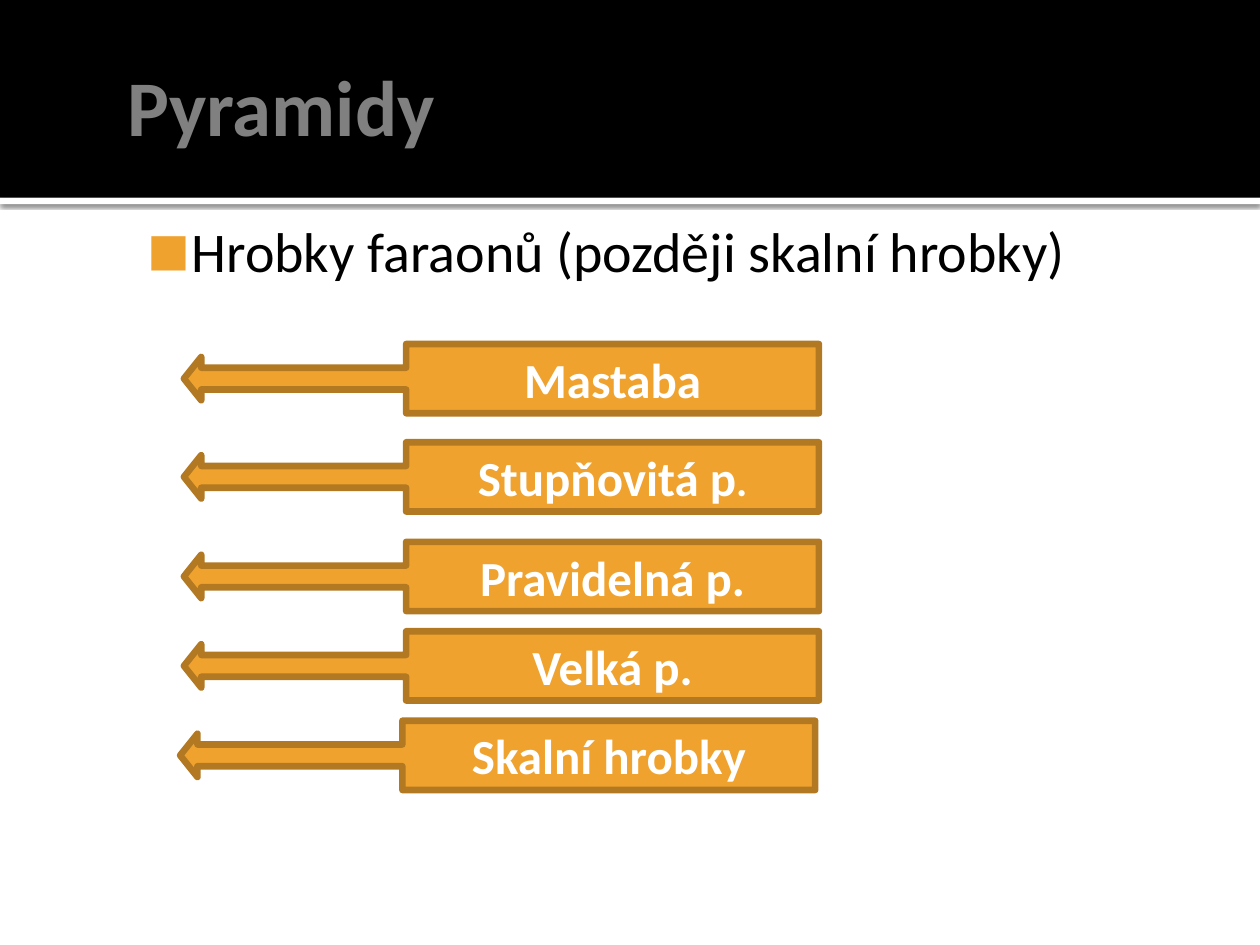
from dataclasses import dataclass

from lxml import etree
from pptx import Presentation
from pptx.dml.color import RGBColor
from pptx.enum import shapes, text
from pptx.oxml import ns
from pptx.util import Inches, Pt

BLACK = RGBColor(0x00, 0x00, 0x00)
WHITE = RGBColor(0xFF, 0xFF, 0xFF)
GRAY = RGBColor(0x80, 0x80, 0x80)
ORANGE = RGBColor(0xF0, 0xA2, 0x2E)
BROWN = RGBColor(0xB2, 0x78, 0x22)
FONT = "Calibri"


@dataclass(frozen=True)
class Callout:
    label: str
    top: float
    left: float = 1.46
    ending: str = ""


CALLOUTS = [
    Callout("Mastaba", 2.73),
    Callout("Stupňovitá p", 3.51, ending="."),
    Callout("Pravidelná p.", 4.3),
    Callout("Velká p.", 5.01),
    Callout("Skalní hrobky", 5.72, left=1.43),
]


def add_span(para, wording: str, size: float, color: RGBColor, bold: bool = False) -> None:
    span = para.add_run()
    span.text = wording
    span.font.name = FONT
    span.font.size = Pt(size)
    span.font.bold = bold
    span.font.color.rgb = color


def add_band(page, top: float, height: float, color: RGBColor):
    band = page.shapes.add_shape(
        shapes.MSO_SHAPE.RECTANGLE, 0, Inches(top), Inches(10), Inches(height)
    )
    band.shadow.inherit = False
    band.fill.solid()
    band.fill.fore_color.rgb = color
    band.line.fill.background()
    return band


def add_shadow(shape) -> None:
    effects = shape._element.spPr.find(ns.qn("a:effectLst"))
    shadow = etree.SubElement(
        effects, ns.qn("a:outerShdw"),
        blurRad=str(Pt(2.5)), dist=str(Pt(0.8)), dir="5400000", rotWithShape="0",
    )
    color = etree.SubElement(shadow, ns.qn("a:srgbClr"), val=str(BLACK))
    etree.SubElement(color, ns.qn("a:alpha"), val="60000")


def add_text_box(page, area: tuple, margins: tuple, anchor):
    box = page.shapes.add_textbox(*map(Inches, area))
    frame = box.text_frame
    frame.word_wrap = True
    frame.vertical_anchor = anchor
    (frame.margin_left, frame.margin_top,
     frame.margin_right, frame.margin_bottom) = map(Inches, margins)
    return frame.paragraphs[0]


def add_bullet(para) -> None:
    properties = para._p.get_or_add_pPr()
    properties.set("marL", str(Inches(0.48)))
    properties.set("indent", str(Inches(-0.35)))
    color = etree.SubElement(properties, ns.qn("a:buClr"))
    etree.SubElement(color, ns.qn("a:srgbClr"), val=str(ORANGE))
    etree.SubElement(properties, ns.qn("a:buSzPct"), val="80000")
    etree.SubElement(properties, ns.qn("a:buFont"), typeface=FONT)
    etree.SubElement(properties, ns.qn("a:buChar"), char="■")


def add_callout(page, callout: Callout) -> None:
    box = page.shapes.add_shape(
        shapes.MSO_SHAPE.LEFT_ARROW_CALLOUT,
        Inches(callout.left), Inches(callout.top), Inches(5.04), Inches(0.55),
    )
    for index, value in enumerate((0.313, 0.313, 0.25, 0.65)):
        box.adjustments[index] = value
    box.shadow.inherit = False
    box.fill.solid()
    box.fill.fore_color.rgb = ORANGE
    box.line.color.rgb = BROWN
    box.line.width = Pt(3.78)
    box.text_frame.vertical_anchor = text.MSO_ANCHOR.MIDDLE
    para = box.text_frame.paragraphs[0]
    para.alignment = text.PP_ALIGN.CENTER
    add_span(para, callout.label, 28, WHITE, bold=True)
    if callout.ending:
        add_span(para, callout.ending, 24, WHITE, bold=True)


def main() -> None:
    deck = Presentation()
    deck.slide_width, deck.slide_height = Inches(10), Inches(7.5)
    page = deck.slides.add_slide(deck.slide_layouts[6])

    add_shadow(add_band(page, 1.57, 0.05, WHITE))
    add_band(page, 0, 1.57, BLACK)

    title = add_text_box(
        page, (0.91, 0.25, 8.79, 1.17), (0.1, 0.05, 0.05, 0.05), text.MSO_ANCHOR.MIDDLE
    )
    add_span(title, "Pyramidy", 45, GRAY, bold=True)

    body = add_text_box(
        page, (0.98, 1.62, 8.35, 5.28), (0.06, 0.1, 0.1, 0.05), text.MSO_ANCHOR.TOP
    )
    add_bullet(body)
    add_span(body, "Hrobky faraonů (později skalní hrobky)", 32, BLACK)

    for callout in CALLOUTS:
        add_callout(page, callout)

    deck.save("out.pptx")


if __name__ == "__main__":
    main()
